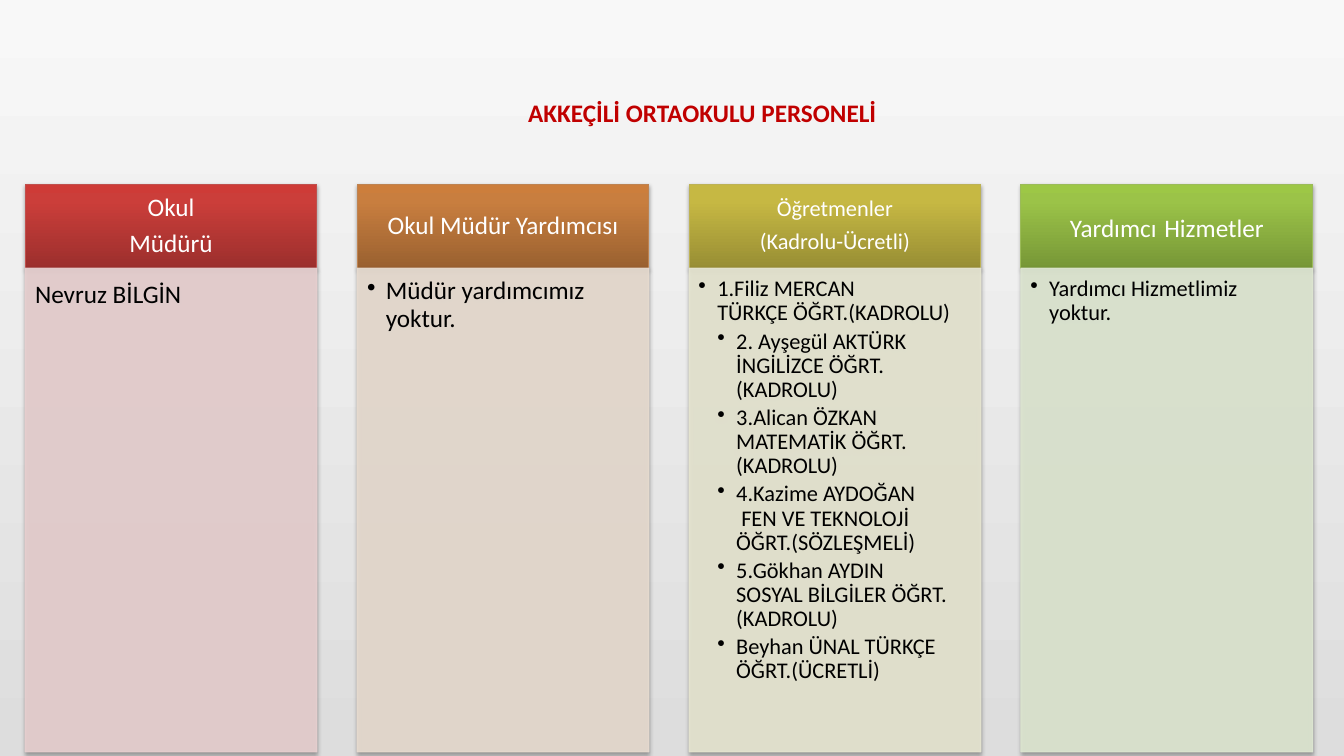
from copy import deepcopy

from lxml.etree import SubElement
from pptx import Presentation
from pptx.dml.color import RGBColor
from pptx.enum.shapes import MSO_SHAPE
from pptx.enum.text import MSO_ANCHOR, PP_ALIGN
from pptx.oxml.ns import qn
from pptx.util import Pt

# Content: a header is a list of lines, a line a list of (text, size) runs;
# an item is (level, lines), and level 0 has no bullet
TITLE = "AKKEÇİLİ ORTAOKULU PERSONELİ"
COLUMNS = [
    {"color": "red", "size": 18, "insets": (10, 10, 10, 11.5),
     "header": [[("Okul", 18)], [("Müdürü", 18)]],
     "items": [(0, ["Nevruz BİLGİN"])]},
    {"color": "orange", "size": 18, "insets": (7.2, 7.2, 10, 11.5),
     "header": [[("Okul Müdür Yardımcısı", 18)]],
     "items": [(1, ["Müdür yardımcımız yoktur."])]},
    {"color": "olive", "size": 16, "insets": (6.7, 6.7, 9, 10),
     "header": [[("Öğretmenler", 16)], [("(Kadrolu-Ücretli)", 16)]],
     "items": [
         (1, ["1.Filiz MERCAN", "TÜRKÇE ÖĞRT.(KADROLU)"]),
         (2, ["2. Ayşegül AKTÜRK", "İNGİLİZCE ÖĞRT.(KADROLU)"]),
         (2, ["3.Alican ÖZKAN", "MATEMATİK ÖĞRT.(KADROLU)"]),
         (2, ["4.Kazime AYDOĞAN", " FEN VE TEKNOLOJİ ÖĞRT.(SÖZLEŞMELİ)"]),
         (2, ["5.Gökhan AYDIN", "SOSYAL BİLGİLER ÖĞRT.(KADROLU)"]),
         (2, ["Beyhan ÜNAL TÜRKÇE ÖĞRT.(ÜCRETLİ)"])]},
    {"color": "green", "size": 16, "insets": (6.7, 6.7, 9, 10),
     "header": [[("Yardımcı", 18), (" ", 24), ("Hizmetler", 18)]],
     "items": [(1, ["Yardımcı Hizmetlimiz yoktur."])]},
]
COLUMNS[0]["insets"] = COLUMNS[1]["insets"]

COLORS = {
    "title": "C00000", "white": "FFFFFF", "black": "000000",
    "back_top": "F8F8F8", "back_bottom": "DDDDDD",
    "red_0": "9C2F2D", "red_80": "CB3E3A", "red_100": "CE3B37",
    "red_line": "C0504D", "red_pale": "E8D0D0",
    "orange_0": "9A6130", "orange_80": "C87E3F", "orange_100": "CC7E3C",
    "orange_line": "BE8351", "orange_pale": "E8DCD0",
    "olive_0": "988E34", "olive_80": "C6B843", "olive_100": "C9BB41",
    "olive_line": "BDB255", "olive_pale": "E7E6D1",
    "green_0": "779737", "green_80": "9BC348", "green_100": "9DC746",
    "green_line": "9BBB59", "green_pale": "DEE7D1",
}
FONT = "Calibri"
LEFT, PITCH, WIDTH = 18, 237.1, 208.4
HEADER_TOP, HEADER_HEIGHT, BODY_HEIGHT = 131.7, 59.8, 345.6
INDENT = 13.5


def rgb(name):
    return RGBColor.from_string(COLORS[name])


def add_run(paragraph, text, size, color, bold=False):
    run = paragraph.add_run()
    run.text = text
    run.font.name, run.font.size, run.font.bold = FONT, Pt(size), bold
    run.font.color.rgb = rgb(color)


def set_insets(frame, left, top, right, bottom):
    frame.margin_left, frame.margin_top = Pt(left), Pt(top)
    frame.margin_right, frame.margin_bottom = Pt(right), Pt(bottom)


def next_paragraph(frame, index):
    return frame.add_paragraph() if index else frame.paragraphs[0]


def add_panel(slide, left, top, height, line_color):
    panel = slide.shapes.add_shape(
        MSO_SHAPE.RECTANGLE, Pt(left), Pt(top), Pt(WIDTH), Pt(height))
    panel.line.color.rgb = rgb(line_color)
    panel.line.width = Pt(0.75)
    panel.shadow.inherit = False
    effects = panel._element.spPr.find(qn("a:effectLst"))
    shadow = SubElement(effects, qn("a:outerShdw"), blurRad=str(Pt(3.1)),
                        dist=str(Pt(1.8)), dir="5400000", rotWithShape="0")
    color = SubElement(shadow, qn("a:srgbClr"), val=COLORS["black"])
    SubElement(color, qn("a:alpha"), val="35000")
    panel.text_frame.word_wrap = True
    return panel


def fill_header(panel, color):
    panel.fill.gradient()
    panel.fill.gradient_angle = 90
    stop_list = panel._element.spPr.find(".//" + qn("a:gsLst"))
    stop_list.append(deepcopy(stop_list[-1]))
    for stop, percent in zip(panel.fill.gradient_stops, (0, 80, 100)):
        stop.position = percent / 100
        stop.color.rgb = rgb(f"{color}_{percent}")


def fill_body(panel, color):
    panel.fill.solid()
    panel.fill.fore_color.rgb = rgb(color)
    for swatch in panel._element.spPr.iter(qn("a:srgbClr")):
        if swatch.get("val") == COLORS[color]:
            SubElement(swatch, qn("a:alpha"), val="90000")


def write_header(frame, lines):
    frame.vertical_anchor = MSO_ANCHOR.MIDDLE
    set_insets(frame, 9, 5.5, 9, 5.5)
    for index, runs in enumerate(lines):
        paragraph = next_paragraph(frame, index)
        paragraph.alignment = PP_ALIGN.CENTER
        paragraph.line_spacing = 0.9
        paragraph.space_after = Pt(6.3)
        for text, size in runs:
            add_run(paragraph, text, size, "white")


def write_items(frame, column):
    frame.vertical_anchor = MSO_ANCHOR.TOP
    set_insets(frame, *column["insets"])
    for index, (level, lines) in enumerate(column["items"]):
        paragraph = next_paragraph(frame, index)
        paragraph.alignment = PP_ALIGN.LEFT
        if level:
            paragraph.level = level
            paragraph.line_spacing = 0.9
            paragraph.space_after = Pt(2.8)
            properties = paragraph._p.get_or_add_pPr()
            properties.set("marL", str(Pt(INDENT * level)))
            properties.set("indent", str(Pt(-INDENT)))
            SubElement(properties, qn("a:buChar"), char="•")
        for number, line in enumerate(lines):
            if number:
                paragraph.add_line_break()
            add_run(paragraph, line, column["size"], "black")


# Slide and background
presentation = Presentation()
presentation.slide_width, presentation.slide_height = Pt(960), Pt(540)
slide = presentation.slides.add_slide(presentation.slide_layouts[5])
background = slide.background.fill
background.gradient()
background.gradient_angle = 270
for stop, position, name in zip(background.gradient_stops, (0, 1),
                                ("back_top", "back_bottom")):
    stop.position = position
    stop.color.rgb = rgb(name)

# Title
title = slide.shapes.title
title.left, title.top = Pt(370), Pt(65.7)
title.width, title.height = Pt(265.7), Pt(29)
title.text_frame.word_wrap = False
title.text_frame.vertical_anchor = MSO_ANCHOR.MIDDLE
title_line = title.text_frame.paragraphs[0]
title_line.alignment = PP_ALIGN.LEFT
add_run(title_line, TITLE, 18, "title", bold=True)

# Staff columns
for position, column in enumerate(COLUMNS):
    left, color = LEFT + position * PITCH, column["color"]
    header = add_panel(slide, left, HEADER_TOP, HEADER_HEIGHT, f"{color}_line")
    fill_header(header, color)
    write_header(header.text_frame, column["header"])
    body = add_panel(slide, left, HEADER_TOP + HEADER_HEIGHT, BODY_HEIGHT,
                     f"{color}_pale")
    fill_body(body, f"{color}_pale")
    write_items(body.text_frame, column)

presentation.save("out.pptx")
